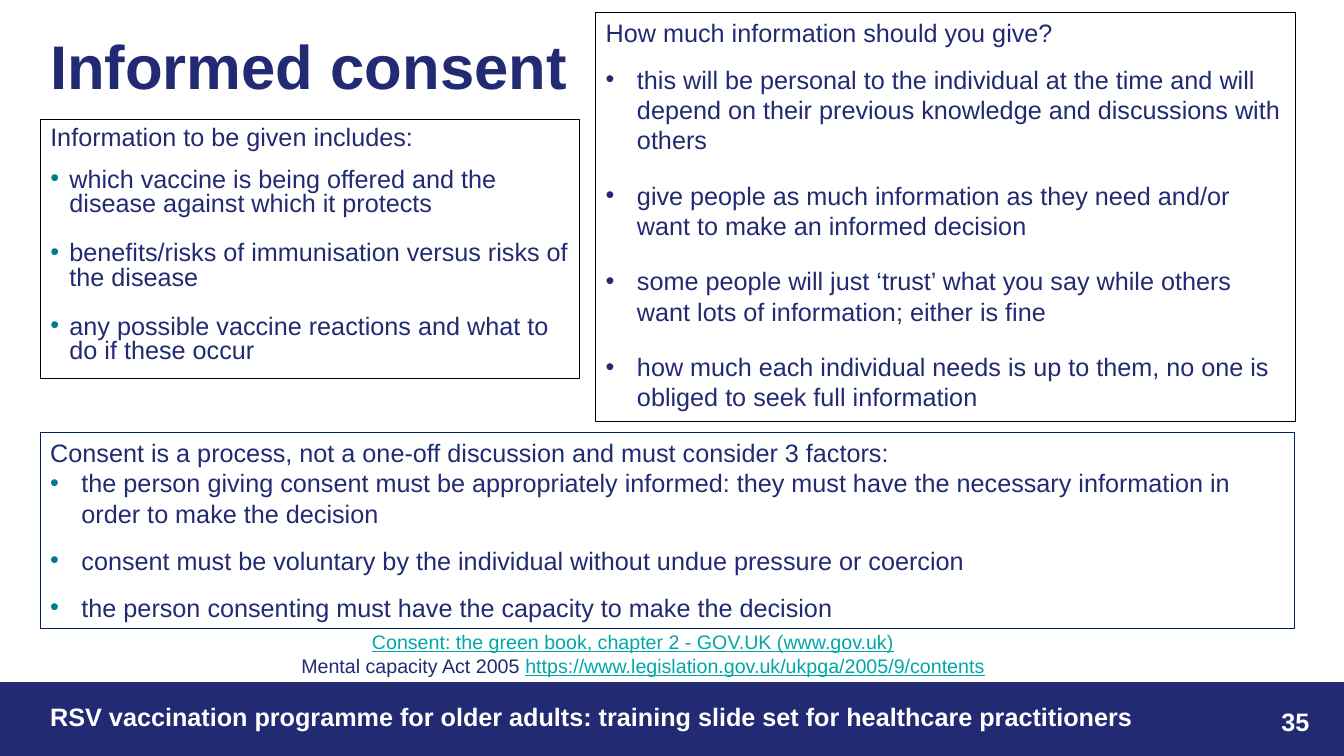
from dataclasses import dataclass

from lxml import etree
from pptx import Presentation
from pptx.dml.color import RGBColor
from pptx.enum.shapes import MSO_SHAPE
from pptx.enum.text import MSO_ANCHOR
from pptx.oxml.ns import qn
from pptx.util import Inches, Pt

RECTANGLE = MSO_SHAPE.RECTANGLE
TOP, MIDDLE = MSO_ANCHOR.TOP, MSO_ANCHOR.MIDDLE


@dataclass(frozen=True)
class Theme:
    font: str = "Arial"
    navy: str = "212A73"
    bullet: str = "007C91"
    link: str = "00A7A7"
    white: str = "FFFFFF"
    black: str = "000000"
    border_blue: str = "002060"
    title_size: int = 44
    body_size: int = 18
    link_size: int = 14


THEME = Theme()


def add_text(left, top, width, height, lines, size, color, bold=False, anchor=TOP):
    """Add a text box whose lines are lists of runs; link runs start with https or Consent:."""
    box = slide.shapes.add_textbox(Inches(left), Inches(top), Inches(width), Inches(height))
    frame = box.text_frame
    frame.word_wrap = True
    frame.vertical_anchor = anchor
    for index, runs in enumerate(lines):
        paragraph = frame.add_paragraph() if index else frame.paragraphs[0]
        for text in runs:
            run = paragraph.add_run()
            run.text = text
            font = run.font
            font.name, font.size, font.bold = THEME.font, Pt(size), bold
            is_link = text.startswith(("https:", "Consent: "))
            font.underline = is_link
            font.color.rgb = RGBColor.from_string(THEME.link if is_link else color)
    return box


def add_bullet(paragraph, indent, color):
    properties = paragraph._p.get_or_add_pPr()
    properties.set("marL", str(Inches(indent)))
    properties.set("indent", str(-Inches(indent)))
    bullet_color = etree.SubElement(properties, qn("a:buClr"))
    etree.SubElement(bullet_color, qn("a:srgbClr"), val=color)
    etree.SubElement(properties, qn("a:buFont"), typeface=THEME.font)
    etree.SubElement(properties, qn("a:buChar"), char="•")


presentation = Presentation()
presentation.slide_width = Inches(13.33)
presentation.slide_height = Inches(7.5)
slide = presentation.slides.add_slide(presentation.slide_layouts[6])

footer_band = slide.shapes.add_shape(
    RECTANGLE, Inches(0), Inches(6.77), Inches(13.33), Inches(0.73)
)
footer_band.shadow.inherit = False
footer_band.fill.solid()
footer_band.fill.fore_color.rgb = RGBColor.from_string(THEME.navy)
footer_band.line.color.rgb = RGBColor.from_string(THEME.navy)
footer_band.line.width = Pt(1)

title = add_text(0.4, 0.29, 11.5, 0.8, [["Informed consent"]],
                 THEME.title_size, THEME.navy, bold=True, anchor=MIDDLE)
title.text_frame.paragraphs[0].line_spacing = 0.9

# Place, border, bullet colour, indent, heading and bullet line spacing,
# space before the first and the later bullets, space after, wording
panels = [
    ((0.4, 1.19, 5.35, 2.57), THEME.black, THEME.bullet, 0.19, (0.9, 0.8), (12, 12), 6, [
        "Information to be given includes:",
        "which vaccine is being offered and the disease against which it protects",
        "benefits/risks of immunisation versus risks of the disease",
        "any possible vaccine reactions and what to do if these occur",
    ]),
    ((5.91, 0.12, 6.94, 4.06), THEME.black, THEME.navy, 0.31, (1.0, 1.0), (12, 12), 6, [
        "How much information should you give?",
        "this will be personal to the individual at the time and will depend on "
        "their previous knowledge and discussions with others",
        "give people as much information as they need and/or want to make an informed decision",
        "some people will just ‘trust’ what you say while others want lots of "
        "information; either is fine",
        "how much each individual needs is up to them, no one is obliged to seek full information",
    ]),
    ((0.4, 4.29, 12.44, 1.95), THEME.border_blue, THEME.bullet, 0.31, (1.0, 1.0), (0, 12), 0, [
        "Consent is a process, not a one-off discussion and must consider 3 factors:",
        "the person giving consent must be appropriately informed: they must have "
        "the necessary information in order to make the decision",
        "consent must be voluntary by the individual without undue pressure or coercion",
        "the person consenting must have the capacity to make the decision",
    ]),
]
for place, border, bullet_color, indent, spacing, before, after, lines in panels:
    panel = add_text(*place, [[line] for line in lines], THEME.body_size, THEME.navy)
    panel.line.color.rgb = RGBColor.from_string(border)
    panel.line.width = Pt(0.75)
    heading, *bullets = panel.text_frame.paragraphs
    heading.line_spacing = spacing[0]
    for index, paragraph in enumerate(bullets):
        paragraph.line_spacing = spacing[1]
        paragraph.space_before = Pt(before[min(index, 1)])
        paragraph.space_after = Pt(after)
        add_bullet(paragraph, indent, bullet_color)

add_text(3.59, 6.2, 6.85, 0.34,
         [["Consent: the green book, chapter 2 - GOV.UK (www.gov.uk)"]],
         THEME.link_size, THEME.navy)
add_text(2.89, 6.44, 10.4, 0.34,
         [["Mental capacity Act 2005 ", "https://www.legislation.gov.uk/ukpga/2005/9/contents"]],
         THEME.link_size, THEME.navy)

add_text(0.4, 6.91, 11.03, 0.49,
         [["RSV vaccination programme for older adults: training slide set for "
           "healthcare practitioners"]],
         THEME.body_size, THEME.white, bold=True)
add_text(12.61, 6.96, 0.7, 0.4, [["35"]], THEME.body_size, THEME.white, bold=True)

presentation.save("out.pptx")
